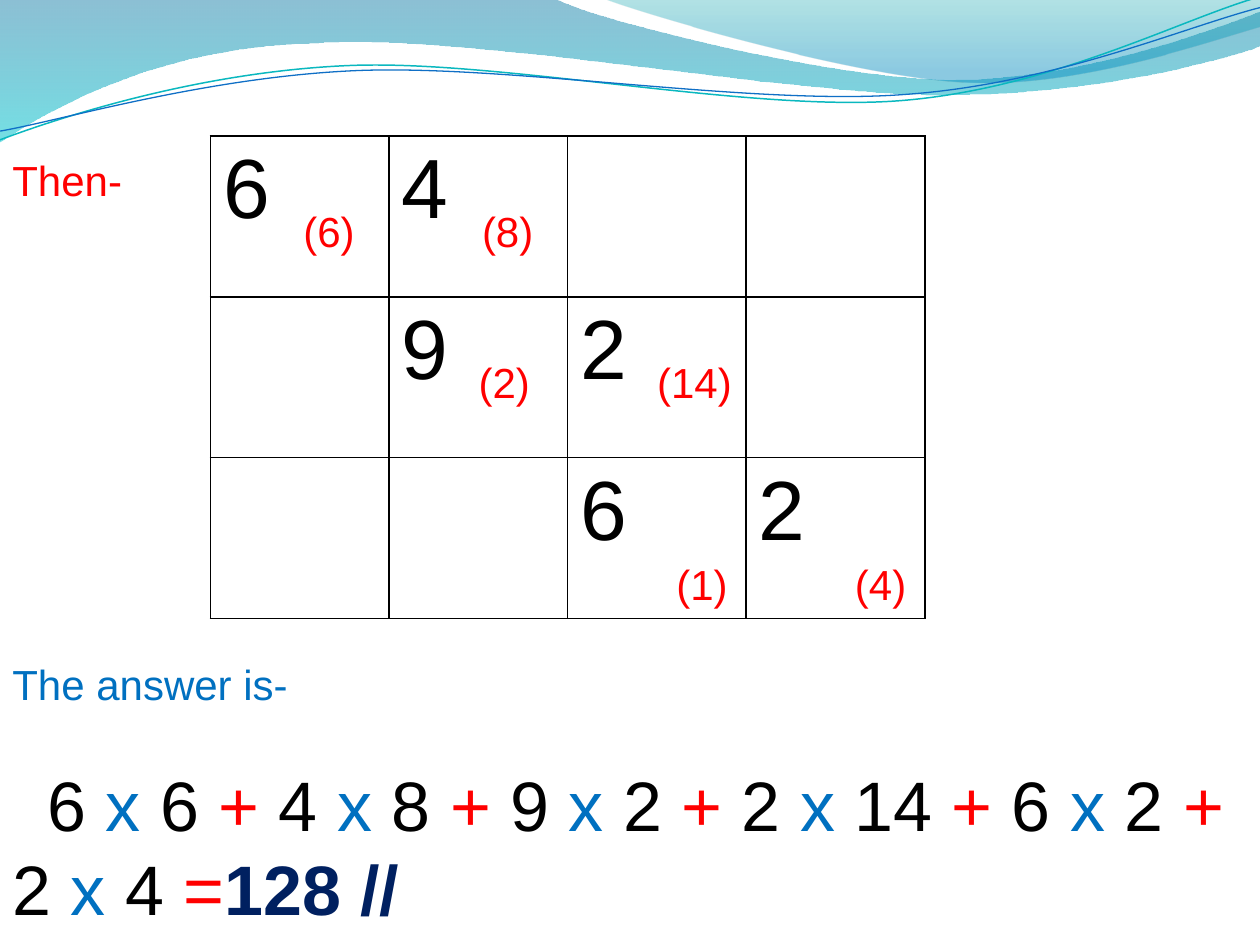
from math import cos, radians, sin

from lxml import etree
from pptx import Presentation
from pptx.dml.color import RGBColor
from pptx.oxml import parse_xml
from pptx.oxml.ns import nsdecls, qn
from pptx.util import Inches, Pt

BLACK = RGBColor(0, 0, 0)
RED = RGBColor(0xFF, 0, 0)
BLUE = RGBColor(0, 0x70, 0xC0)
NAVY = RGBColor(0, 0x20, 0x60)
DEEP_BLUE = RGBColor(0, 0x74, 0xA1)
CYAN = RGBColor(0, 0xC6, 0xCF)
TEAL = RGBColor(0, 0xA1, 0xA9)
SKY = RGBColor(0, 0x8B, 0xBF)
WAVE_TEAL = RGBColor(0x0A, 0xB8, 0xBF)
WAVE_BLUE = RGBColor(0x0F, 0x6F, 0xC6)
FONT = "Arial"
TILT = 2.7

presentation = Presentation()
presentation.slide_width = Inches(10)
presentation.slide_height = Inches(7.5)
slide = presentation.slides.add_slide(presentation.slide_layouts[6])


def add_curve(start, segments, close):
    points = [start]
    for segment in segments:
        points += zip(segment[::2], segment[1::2])
    corners = [(Inches(x), Inches(y)) for x, y in points]
    builder = slide.shapes.build_freeform(*corners[0])
    builder.add_line_segments(corners[1:], close=close)
    shape = builder.convert_to_shape()
    shape.shadow.inherit = False
    lines = iter(list(shape.element.iter(qn("a:lnTo"))))
    for segment in segments:
        first = next(lines)
        if len(segment) == 6:
            first.tag = qn("a:cubicBezTo")
            for line in (next(lines), next(lines)):
                first.append(line[0])
                line.getparent().remove(line)
    return shape


def add_run(paragraph, text, size, color):
    run = paragraph.add_run()
    run.text = text
    run.font.name = FONT
    run.font.size = Pt(size)
    run.font.color.rgb = color
    return run


bands = [
    ((0, 0), [(4.4, -0.01), (4.76, 0.17, 6.64, 0.63, 7.58, 0.63),
              (8.53, 0.63, 9.58, 0.26, 10, 0.09), (10.01, 0.36),
              (9.83, 0.44, 8.7, 0.76, 7.46, 0.75),
              (6.22, 0.75, 3.82, 0.28, 2.57, 0.34),
              (1.29, 0.36, 0.46, 0.83, -0.01, 1.13)],
     [(0, DEEP_BLUE, 45), (1, CYAN, 55)]),
    ((4.79, -0.01), [(5.09, 0.11, 6.82, 0.62, 7.69, 0.65),
                     (8.56, 0.69, 9.61, 0.32, 10, 0.21), (10, 0)],
     [(0, TEAL, 30), (0.8, SKY, 45)]),
]
for start, segments, stops in bands:
    band = add_curve(start, segments, True)
    band.line.fill.background()
    band.fill.gradient()
    band.fill.gradient_angle = 270
    for stop, (position, color, _) in zip(band.fill.gradient_stops, stops):
        stop.position = position
        stop.color.rgb = color
    gradient = next(band.element.iter(qn("a:gradFill")))
    for element, (_, _, opacity) in zip(gradient.iter(qn("a:srgbClr")), stops):
        etree.SubElement(element, qn("a:alpha")).set("val", str(opacity * 1000))

waves = [
    ([(0, 1.11), (0.48, 0.93), (1.58, 0.57), (2.77, 0.52), (3.95, 0.47),
      (5.93, 0.89), (7.13, 0.8), (8.33, 0.71), (9.38, 0.15), (9.98, -0.02)],
     0.575, WAVE_TEAL, 0.85),
    ([(0, 1.04), (0.47, 0.96), (1.64, 0.61), (2.83, 0.56), (4.03, 0.51),
      (5.97, 0.84), (7.17, 0.75), (8.36, 0.67), (9.41, 0.21), (10, 0.06)],
     0.59, WAVE_BLUE, 0.75),
]
cosine, sine = cos(radians(TILT)), sin(radians(TILT))
for points, middle, color, width in waves:
    level = [(4.99 + (x - 4.99) * cosine - (y - middle) * sine,
              middle + (x - 4.99) * sine + (y - middle) * cosine) for x, y in points]
    segments = [sum(level[index:index + 3], ()) for index in (1, 4, 7)]
    wave = add_curve(level[0], segments, False)
    wave.rotation = -TILT
    wave.fill.background()
    wave.line.color.rgb = color
    wave.line.width = Pt(width)

COLUMN_WIDTH = 5.67 / 4
LINE_PITCH = 28.8
box = slide.shapes.add_textbox(0, 0, Inches(10), Inches(7.91))
text_frame = box.text_frame
text_frame.word_wrap = True
text_frame.margin_top = Inches(1.23)
lines = [
    ("Then-", RED, 0, None),
    ("\t(6)\t(8)", RED, 0, 2.31),
    ("\t(2)\t(14)", RED, 2, 3.7),
    ("\t(1)\t(4)", RED, 3, 5.27),
    ("The answer is-", BLUE, 1, None),
]
for index, (text, color, gap, tab) in enumerate(lines):
    paragraph = text_frame.add_paragraph() if index else text_frame.paragraphs[0]
    paragraph.line_spacing = Pt(LINE_PITCH)
    if gap:
        paragraph.space_before = Pt(gap * LINE_PITCH)
    if tab:
        tabs = etree.SubElement(paragraph._p.get_or_add_pPr(), qn("a:tabLst"))
        for position in (tab, tab + COLUMN_WIDTH):
            etree.SubElement(tabs, qn("a:tab"), pos=str(Inches(position)), algn="l")
    add_run(paragraph, text, 24, color)

answer = text_frame.add_paragraph()
answer.line_spacing = Pt(48)
answer.space_before = Pt(30)
answer._p.get_or_add_pPr().set("indent", str(Inches(0.28)))
products = [("6", "6"), ("4", "8"), ("9", "2"), ("2", "14"), ("6", "2"), ("2", "4")]
for index, (quantity, cost) in enumerate(products, 1):
    sign = " =" if index == len(products) else " + "
    for text, color in ((quantity + " ", BLACK), ("x ", BLUE), (cost, BLACK), (sign, RED)):
        add_run(answer, text, 40, color)
add_run(answer, "128 //", 40, NAVY).font.bold = True

rows = [["6", "4", "", ""], ["", "9", "2", ""], ["", "", "6", "2"]]
table = slide.shapes.add_table(3, 4, Inches(1.67), Inches(1.08),
                               Inches(5.67), Inches(3.83)).table
table.first_row = False
table.horz_banding = False
for row, values in zip(table.rows, rows):
    for cell, value in zip(row.cells, values):
        properties = cell._tc.get_or_add_tcPr()
        for side in ("lnL", "lnR", "lnT", "lnB"):
            properties.append(parse_xml(
                f'<a:{side} {nsdecls("a")} w="12700"><a:solidFill>'
                f'<a:srgbClr val="{BLACK}"/></a:solidFill></a:{side}>'))
        cell.fill.background()
        if value:
            add_run(cell.text_frame.paragraphs[0], value, 48, BLACK)

presentation.save("out.pptx")
